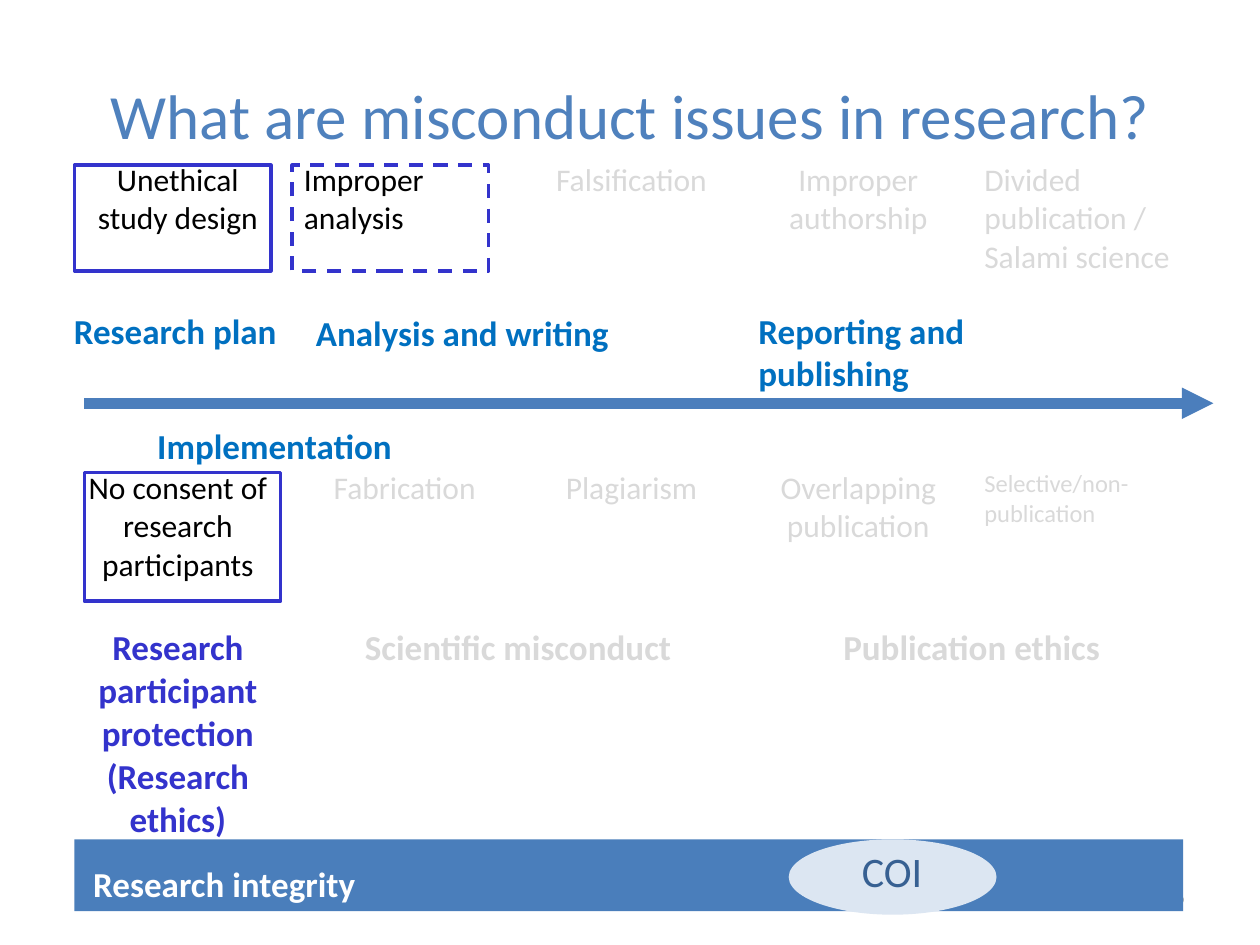
from dataclasses import dataclass

from lxml.etree import SubElement
from pptx import Presentation
from pptx.dml.color import RGBColor
from pptx.enum.dml import MSO_LINE
from pptx.enum.shapes import MSO_CONNECTOR, MSO_SHAPE
from pptx.enum.text import MSO_ANCHOR, PP_ALIGN
from pptx.oxml.ns import qn
from pptx.util import Cm, Pt

FONT = "Calibri"
BLACK, GREY, VIOLET, BLUE = "000000", "D9D9D9", "3333CC", "0070C0"
LEFT, CENTER, RIGHT = PP_ALIGN.LEFT, PP_ALIGN.CENTER, PP_ALIGN.RIGHT


@dataclass
class Cell:
    text: str
    color: str = GREY
    align: PP_ALIGN = CENTER
    size: int = 18
    bold: bool = False
    span: int = 1


@dataclass
class TextBox:
    text: str
    left: float
    top: float
    width: float = 6.6
    height: float = 1.12
    color: str = BLUE
    size: int = 20
    bold: bool = True
    align: PP_ALIGN = LEFT
    anchor: MSO_ANCHOR = MSO_ANCHOR.TOP


@dataclass
class Block:
    kind: MSO_SHAPE
    left: float
    top: float
    width: float
    height: float
    fill: str = ""
    dashed: bool = False


def rgb(value: str) -> RGBColor:
    return RGBColor.from_string(value)


def write(tf, text: str, color: str, size: int, bold: bool, align: PP_ALIGN) -> None:
    """Fill a text frame, one paragraph per line."""
    tf.word_wrap = True
    for i, line in enumerate(text.split("\n")):
        p = tf.paragraphs[0] if i == 0 else tf.add_paragraph()
        p.alignment = align
        r = p.add_run()
        r.text = line
        for name, value in {"name": FONT, "size": Pt(size), "bold": bold}.items():
            setattr(r.font, name, value)
        r.font.color.rgb = rgb(color)


def add_text(s, box: TextBox) -> None:
    sp = s.shapes.add_textbox(*map(Cm, (box.left, box.top, box.width, box.height)))
    sp.text_frame.vertical_anchor = box.anchor
    write(sp.text_frame, box.text, box.color, box.size, box.bold, box.align)


def add_block(s, block: Block) -> None:
    """Draw a filled shape, or a violet frame when there is no fill."""
    sp = s.shapes.add_shape(
        block.kind, *map(Cm, (block.left, block.top, block.width, block.height)))
    sp.shadow.inherit = False
    if block.fill:
        sp.fill.solid()
        sp.fill.fore_color.rgb = rgb(block.fill)
        sp.line.fill.background()
        return
    sp.fill.background()
    sp.line.color.rgb = rgb(VIOLET)
    sp.line.width = Pt(2)
    if block.dashed:
        sp.line.dash_style = MSO_LINE.DASH


def add_issue_table(s, rows: list[list[Cell]]) -> None:
    heights = (3.89, 5.51, 3.89)
    top_margins = (0.13, 2.45, 0.13)  # the middle row clears the timeline
    table = s.shapes.add_table(
        3, 5, Cm(1.3), Cm(3.12), Cm(22.86), Cm(sum(heights))).table
    table.first_row = table.horz_banding = False
    for row, height in zip(table.rows, heights):
        row.height = Cm(height)
    for cell in table.iter_cells():
        cell.fill.background()
    for r, (row, margin) in enumerate(zip(rows, top_margins)):
        c = 0
        for item in row:
            cell = table.cell(r, c)
            if item.span > 1:
                cell.merge(table.cell(r, c + item.span - 1))
            cell.margin_top = Cm(margin)
            write(cell.text_frame, item.text, item.color, item.size,
                  item.bold, item.align)
            c += item.span


def add_timeline(s) -> None:
    y = Cm(8.13)
    line = s.shapes.add_connector(MSO_CONNECTOR.STRAIGHT, Cm(1.7), y, Cm(24.46), y)
    line.line.color.rgb = rgb("4B7EBC")
    line.line.width = Pt(6)
    SubElement(line.line._get_or_add_ln(), qn("a:tailEnd"), type="triangle")
    SubElement(line._element.spPr, qn("a:effectLst"))


ISSUES = [
    [Cell("Unethical\nstudy design", BLACK),
     Cell("Improper analysis", BLACK, LEFT),
     Cell("Falsification"),
     Cell("Improper authorship"),
     Cell("Divided publication / Salami science", align=LEFT)],
    [Cell("No consent of research participants", BLACK),
     Cell("Fabrication"),
     Cell("Plagiarism"),
     Cell("Overlapping publication"),
     Cell("Selective/non-publication", align=LEFT, size=14)],
    [Cell("Research participant protection\n(Research ethics)", VIOLET,
          size=20, bold=True),
     Cell("Scientific misconduct", size=20, bold=True, span=2),
     Cell("Publication ethics", size=20, bold=True, span=2)],
]
PHASES = [
    TextBox("Research plan", 1.24, 6.12),
    TextBox("Implementation", 2.92, 8.43),
    TextBox("Analysis and writing", 6.12, 6.15),
    TextBox("Reporting and publishing", 15.04, 6.12, height=1.96),
]
FRAMES = [
    Block(MSO_SHAPE.RECTANGLE, 1.5, 3.33, 3.96, 2.13),
    Block(MSO_SHAPE.RECTANGLE, 1.7, 9.53, 3.96, 2.59),
    Block(MSO_SHAPE.RECTANGLE, 5.89, 3.33, 3.96, 2.13, dashed=True),
]


def main() -> None:
    prs = Presentation()
    prs.slide_width, prs.slide_height = Cm(25.4), Cm(19.05)
    s = prs.slides.add_slide(prs.slide_layouts[5])

    # Title
    title = s.shapes.title
    place = {"left": 1.27, "top": 0.71, "width": 22.86, "height": 3.18}
    for name, value in place.items():
        setattr(title, name, Cm(value))
    title.text_frame.vertical_anchor = MSO_ANCHOR.MIDDLE
    write(title.text_frame, "What are misconduct issues in research?",
          "4F81BD", 36, False, CENTER)

    # Issues and page number
    add_issue_table(s, ISSUES)
    add_text(s, TextBox("9", 18.21, 17.65, 5.92, 1.02, "8C8C8C", 12, False,
                        RIGHT, MSO_ANCHOR.MIDDLE))

    # Timeline with its phases, and the highlighted issues
    add_timeline(s)
    for phase in PHASES:
        add_text(s, phase)
    for frame in FRAMES:
        add_block(s, frame)

    # Research integrity bar
    add_block(s, Block(MSO_SHAPE.RECTANGLE, 1.5, 16.92, 22.35, 1.45, "4A7EBB"))
    add_text(s, TextBox("Research integrity", 1.63, 17.27, 13.21, color="FFFFFF"))
    add_block(s, Block(MSO_SHAPE.OVAL, 15.9, 16.92, 4.19, 1.52, "DCE6F2"))
    add_text(s, TextBox("COI", 16.69, 16.92, 2.59, 1.27, "376092", 24, False, CENTER))

    prs.save("out.pptx")


if __name__ == "__main__":
    main()
